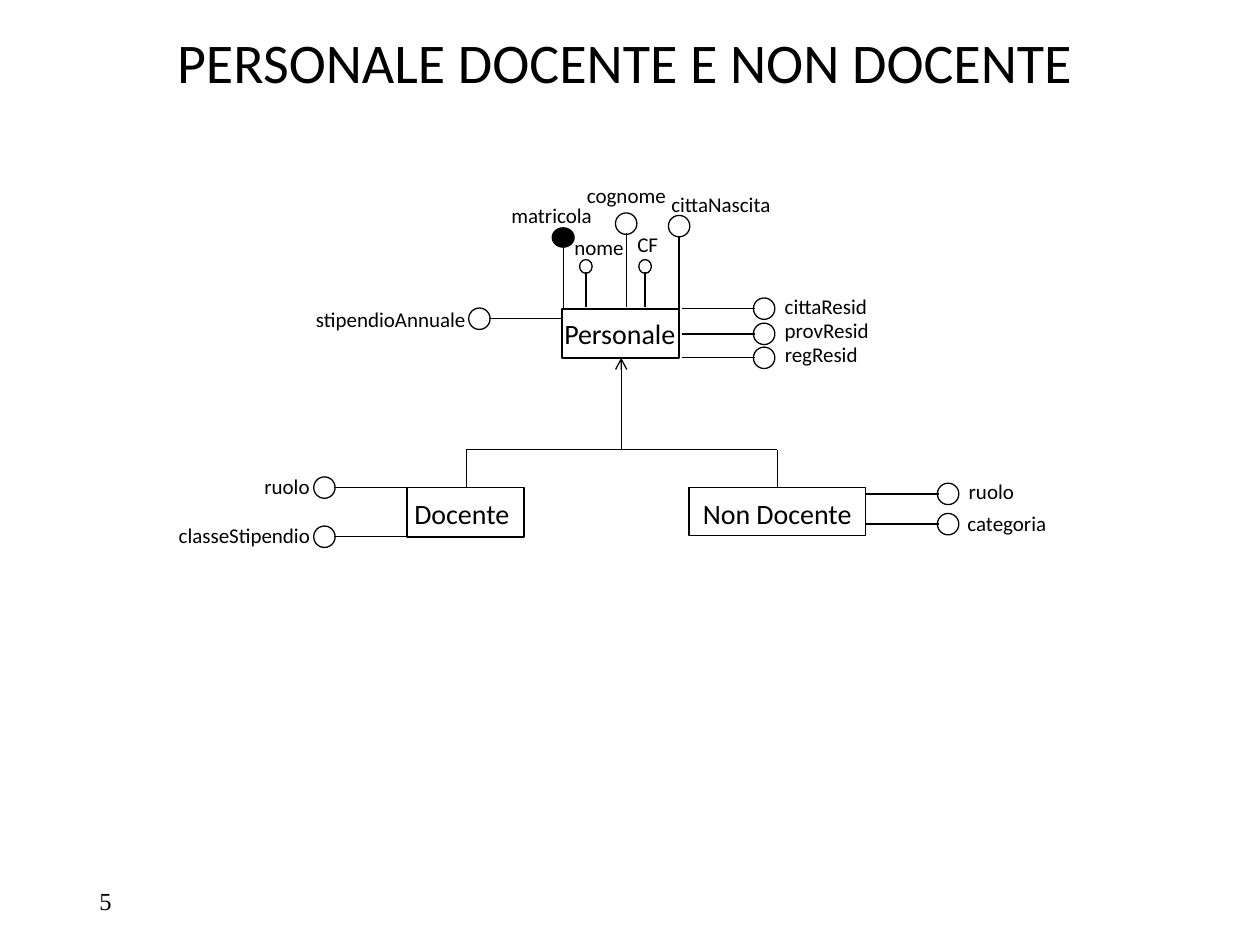
from dataclasses import dataclass

from lxml.etree import SubElement
from pptx import Presentation
from pptx.dml.color import RGBColor
from pptx.enum.shapes import MSO_CONNECTOR, MSO_SHAPE
from pptx.enum.text import MSO_ANCHOR, MSO_AUTO_SIZE, PP_ALIGN
from pptx.oxml.ns import qn
from pptx.util import Inches, Pt

BLACK = "000000"
SPAN = 0.58


@dataclass
class Entity:
    """A rectangle with its name, in inches."""
    name: str
    box: tuple[float, float, float, float]
    label: tuple[float, float, float, float]


@dataclass
class Attribute:
    """A stem of signed length (dx, dy) from an entity, a circle and a label."""
    name: str
    start: tuple[float, float]
    stem: tuple[float, float]
    label: tuple[float, float, float]
    size: tuple[float, float] = (0.17, 0.17)
    key: bool = False


ENTITIES = [
    Entity("Personale", (4.46, 2.45, 0.93, 0.39), (4.38, 2.46, 1.09, 0.37)),
    Entity("Docente", (3.23, 3.87, 0.93, 0.39), (3.19, 3.89, 0.97, 0.37)),
    Entity("Non Docente", (5.47, 3.87, 1.4, 0.38), (5.48, 3.89, 1.4, 0.37)),
]

ATTRIBUTES = [
    Attribute("matricola", (4.47, 2.45), (0, -0.5), (3.96, 1.56, 0.85), (0.17, 0.15), True),
    Attribute("nome", (4.65, 2.44), (0, -0.28), (4.46, 1.81, 0.6), (0.1, 0.11)),
    Attribute("cognome", (4.97, 2.44), (0, -0.59), (4.56, 1.4, 0.84)),
    Attribute("CF", (5.12, 2.44), (0, -0.28), (4.96, 1.79, 0.37), (0.1, 0.11)),
    Attribute("cittaNascita", (5.39, 2.46), (0, -0.59), (5.23, 1.47, 1)),
    Attribute("cittaResid", (5.41, 2.45), (SPAN, 0), (6.13, 2.28, 0.87)),
    Attribute("provResid", (5.41, 2.65), (SPAN, 0), (6.13, 2.47, 0.87)),
    Attribute("regResid", (5.41, 2.84), (SPAN, 0), (6.13, 2.66, 0.79)),
    Attribute("ruolo", (3.23, 3.87), (-SPAN, 0), (2, 3.71, 0.56)),
    Attribute("classeStipendio", (3.23, 4.26), (-SPAN, 0), (1.32, 4.1, 1.26)),
    Attribute("stipendioAnnuale", (4.46, 2.53), (-SPAN, 0), (2.41, 2.38, 1.4)),
    Attribute("categoria", (6.87, 4.16), (SPAN, 0), (7.58, 4, 0.83)),
    Attribute("ruolo", (6.87, 3.92), (SPAN, 0), (7.59, 3.75, 0.56)),
]


def color(value: str) -> RGBColor:
    """Turn a hex string into a colour."""
    return RGBColor.from_string(value)


def add_text(s, text: str, at: tuple, *, size: float = 12, font: str = "Calibri",
             align=PP_ALIGN.LEFT, anchor=MSO_ANCHOR.TOP, wrap: bool = False,
             spacing: float = 1.0) -> None:
    """Add a text box with one formatted paragraph."""
    tf = s.shapes.add_textbox(*map(Inches, at)).text_frame
    tf.word_wrap = wrap
    tf.auto_size = MSO_AUTO_SIZE.NONE if wrap else MSO_AUTO_SIZE.SHAPE_TO_FIT_TEXT
    tf.vertical_anchor = anchor
    p = tf.paragraphs[0]
    p.alignment = align
    p.line_spacing = spacing
    r = p.add_run()
    r.text = text
    r.font.size = Pt(size)
    r.font.name = font
    r.font.color.rgb = color(BLACK)


def add_line(s, start: tuple, end: tuple, arrow: bool = False) -> None:
    """Add a thin straight line, with an open arrowhead at its end if asked."""
    c = s.shapes.add_connector(MSO_CONNECTOR.STRAIGHT, *map(Inches, (*start, *end)))
    c.line.color.rgb = color(BLACK)
    c.line.width = Pt(0.75)
    if arrow:
        SubElement(c.line._get_or_add_ln(), qn("a:tailEnd"), type="arrow")
    SubElement(c._element.spPr, qn("a:effectLst"))


def add_outline(s, kind, at: tuple, width: float, filled: bool = False) -> None:
    """Add a black outlined shape, hollow unless filled."""
    sp = s.shapes.add_shape(kind, *map(Inches, at))
    sp.shadow.inherit = False
    sp.line.color.rgb = color(BLACK)
    sp.line.width = Pt(width)
    if filled:
        sp.fill.solid()
        sp.fill.fore_color.rgb = color(BLACK)
    else:
        sp.fill.background()


def add_entity(s, entity: Entity) -> None:
    """Draw an entity rectangle and its name."""
    add_outline(s, MSO_SHAPE.RECTANGLE, entity.box, 1)
    add_text(s, entity.name, entity.label, size=16)


def add_attribute(s, attribute: Attribute) -> None:
    """Draw the stem, the circle just past its end, and the label."""
    (x, y), (dx, dy), (w, h) = attribute.start, attribute.stem, attribute.size
    end = (x + dx, y + dy)
    length = abs(dx) + abs(dy)
    cx = end[0] + dx / length * (w / 2 - 0.01)
    cy = end[1] + dy / length * (h / 2 - 0.01)
    add_line(s, attribute.start, end)
    add_outline(s, MSO_SHAPE.OVAL, (cx - w / 2, cy - h / 2, w, h),
                1 if attribute.key else 0.75, attribute.key)
    add_text(s, attribute.name, (*attribute.label, 0.3))


def add_hierarchy(s, parent: tuple, children: list[float], bar: float, bottom: float) -> None:
    """Draw the generalization arrow, its bar and a drop to each child."""
    add_line(s, (parent[0], bar), parent, arrow=True)
    add_line(s, (children[0], bar), (children[-1], bar))
    for x in children:
        add_line(s, (x, bottom), (x, bar))


def main() -> None:
    """Build the slide and save it."""
    prs = Presentation()
    prs.slide_width, prs.slide_height = Inches(10), Inches(7.5)
    s = prs.slides.add_slide(prs.slide_layouts[6])
    add_text(s, "PERSONALE DOCENTE E NON DOCENTE", (0.19, 0.12, 9.54, 0.8), size=32,
             align=PP_ALIGN.CENTER, anchor=MSO_ANCHOR.MIDDLE, wrap=True, spacing=0.9)
    for entity in ENTITIES:
        add_entity(s, entity)
    add_hierarchy(s, (4.93, 2.84), [3.7, 6.17], bar=3.57, bottom=3.87)
    for attribute in ATTRIBUTES:
        add_attribute(s, attribute)
    add_text(s, "5", (0.69, 6.95, 2.25, 0.4), size=14, font="Times New Roman",
             anchor=MSO_ANCHOR.MIDDLE, wrap=True)
    prs.save("out.pptx")


if __name__ == "__main__":
    main()
